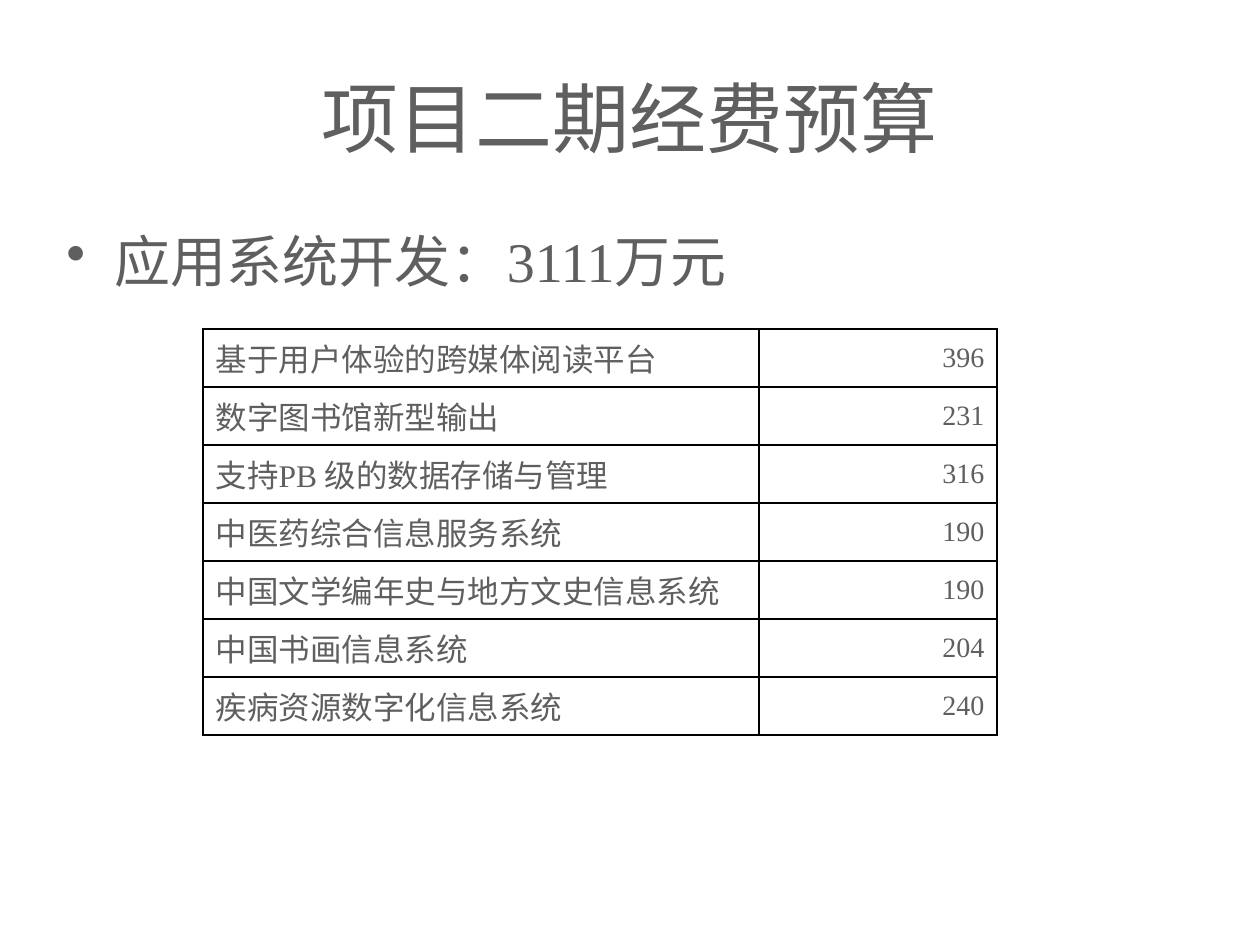
from lxml import etree
from pptx import Presentation
from pptx import util as u
from pptx.dml.color import RGBColor
from pptx.enum import text
from pptx.oxml import ns

GRAY = RGBColor(0x5F, 0x5F, 0x5F)
BLACK = RGBColor(0x00, 0x00, 0x00)
SCALE = u.Inches(1) / 126
SERIF = "Times New Roman"

BUDGET = [
    ("基于用户体验的跨媒体阅读平台", "396"),
    ("数字图书馆新型输出", "231"),
    ("支持PB 级的数据存储与管理", "316"),
    ("中医药综合信息服务系统", "190"),
    ("中国文学编年史与地方文史信息系统", "190"),
    ("中国书画信息系统", "204"),
    ("疾病资源数字化信息系统", "240"),
]


def px(*lengths):
    return [u.Emu(round(length * SCALE)) for length in lengths]


class BudgetSlide:
    def __init__(self, presentation):
        self.slide = presentation.slides.add_slide(presentation.slide_layouts[6])

    def style(self, paragraph, size, font=SERIF, align=text.PP_ALIGN.LEFT):
        paragraph.alignment = align
        for run in paragraph.runs:
            run.font.size = u.Pt(size)
            run.font.name = font
            run.font.color.rgb = GRAY

    def text_box(self, box, content, anchor):
        frame = self.slide.shapes.add_textbox(*px(*box)).text_frame
        frame.word_wrap = True
        frame.vertical_anchor = anchor
        frame.text = content
        return frame.paragraphs[0]

    def title(self, box, content):
        paragraph = self.text_box(box, content, text.MSO_ANCHOR.MIDDLE)
        self.style(paragraph, 44, "Arial", text.PP_ALIGN.CENTER)

    def bullet(self, box, content, indent):
        paragraph = self.text_box(box, content, text.MSO_ANCHOR.TOP)
        properties = paragraph._p.get_or_add_pPr()
        hang = px(indent)[0]
        properties.set("marL", str(hang))
        properties.set("indent", str(-hang))
        etree.SubElement(properties, ns.qn("a:buChar"), char="•")
        self.style(paragraph, 32)

    def borders(self, cell):
        properties = cell._tc.get_or_add_tcPr()
        for side in ("lnL", "lnR", "lnT", "lnB"):
            line = etree.SubElement(properties, ns.qn(f"a:{side}"), w=str(u.Pt(1)))
            fill = etree.SubElement(line, ns.qn("a:solidFill"))
            etree.SubElement(fill, ns.qn("a:srgbClr"), val=str(BLACK))

    def table(self, left, top, widths, row_height, rows):
        frame = self.slide.shapes.add_table(
            len(rows), len(widths),
            *px(left, top, sum(widths), row_height * len(rows)))
        table = frame.table
        table.first_row = table.horz_banding = False
        for column, width in zip(table.columns, px(*widths)):
            column.width = width
        columns = ((18, text.PP_ALIGN.LEFT), (16, text.PP_ALIGN.RIGHT))
        for row, values in zip(table.rows, rows):
            row.height = px(row_height)[0]
            for cell, value, (size, align) in zip(row.cells, values, columns):
                cell.text_frame.text = value
                cell.vertical_anchor = text.MSO_ANCHOR.MIDDLE
                self.style(cell.text_frame.paragraphs[0], size, align=align)
                self.borders(cell)
                cell.fill.background()


def main():
    presentation = Presentation()
    presentation.slide_width, presentation.slide_height = px(1260, 945)
    budget = BudgetSlide(presentation)

    # Heading and total
    budget.title((63, 38, 1134, 157), "项目二期经费预算")
    budget.bullet((54, 220, 1160, 590), "应用系统开发：3111万元", 48)

    # Budget by system
    budget.table(203, 329, (556, 238), 58, BUDGET)

    presentation.save("out.pptx")


if __name__ == "__main__":
    main()
